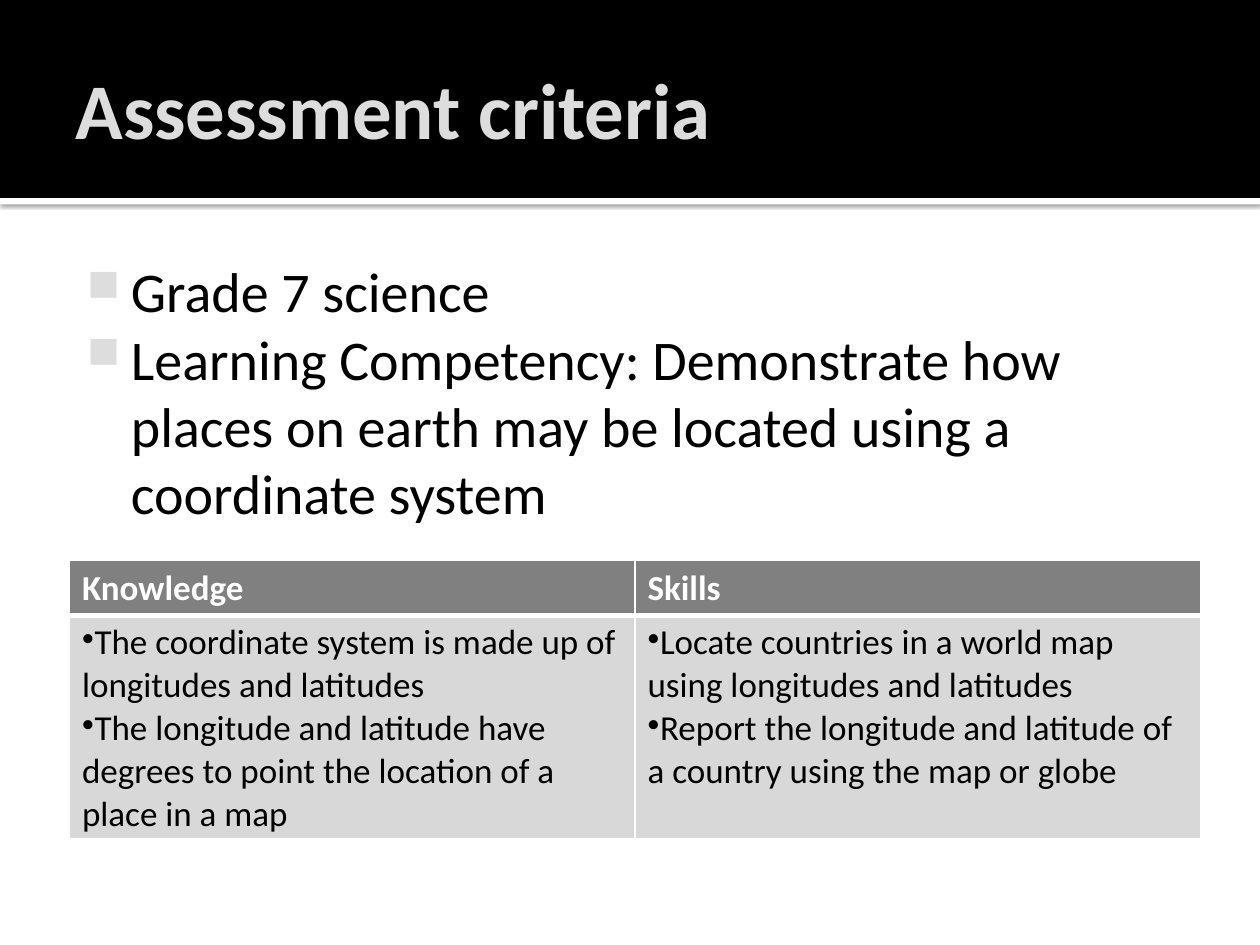
from lxml import etree
from pptx import Presentation
from pptx.dml.color import RGBColor
from pptx.enum import shapes, text
from pptx.oxml import ns
from pptx.util import Cm, Pt

HUES = {"black": "000000", "white": "FFFFFF", "pale": "DDDDDD",
        "head": "808080", "cell": "D8D8D8"}
RGB = {name: RGBColor.from_string(hue) for name, hue in HUES.items()}


def add(parent, tag, **attrs):
    """Append a DrawingML element."""
    node = etree.SubElement(parent, ns.qn(tag))
    for key, val in attrs.items():
        node.set(key, str(val))
    return node


def style(para, size, hue, bold=False):
    font = para.font
    font.name, font.size, font.bold = "Calibri", Pt(size), bold
    font.color.rgb = RGB[hue]


deck = Presentation()
deck.slide_width, deck.slide_height = Cm(25.4), Cm(19.05)
slide = deck.slides.add_slide(deck.slide_layouts[5])

# Header band above a white strip with a soft shadow, both behind the title
bands = [("black", 0, 3.99), ("white", 3.99, 0.13)]
for hue, top, high in bands:
    band = slide.shapes.add_shape(shapes.MSO_SHAPE.RECTANGLE,
                                  0, Cm(top), deck.slide_width, Cm(high))
    band.shadow.inherit = False
    band.fill.solid()
    band.fill.fore_color.rgb = RGB[hue]
    band.line.fill.background()
    slide.shapes._spTree.insert(2, band._element)
glow = band._element.spPr.find(ns.qn("a:effectLst"))
shade = add(glow, "a:outerShdw", blurRad=Pt(2.5), dist=Pt(0.8),
            dir=90 * 60000, algn="tl", rotWithShape=0)
add(add(shade, "a:srgbClr", val=HUES["black"]), "a:alpha", val=60000)

# Title
title = slide.shapes.title
title.left, title.top, title.width, title.height = (
    Cm(1.27), Cm(0.43), Cm(22.86), Cm(3.48))
frame = title.text_frame
frame.text = "Assessment criteria"
frame.vertical_anchor = text.MSO_ANCHOR.MIDDLE
frame.margin_left, frame.margin_right = Cm(0.25), Cm(0.13)
frame.paragraphs[0].alignment = text.PP_ALIGN.LEFT
style(frame.paragraphs[0], 45, "pale", True)

# Bulleted body
body = slide.shapes.add_textbox(Cm(1.27), Cm(4.93), Cm(22.86), Cm(12.85))
frame = body.text_frame
frame.word_wrap = True
frame.margin_left, frame.margin_top = Cm(0.15), Cm(0.25)
frame.text = ("Grade 7 science\n"
              "Learning Competency: Demonstrate how places on earth "
              "may be located using a coordinate system")
for para in frame.paragraphs:
    style(para, 32, "black")
    props = para._p.get_or_add_pPr()
    props.set("marL", str(Cm(1.22)))
    props.set("indent", str(Cm(-0.89)))
    props.insert(0, etree.Element(ns.qn("a:buClr")))
    add(props[0], "a:srgbClr", val=HUES["pale"])
    props.insert(1, etree.Element(ns.qn("a:buSzPct"), val="80000"))
    props.insert(2, etree.Element(ns.qn("a:buChar"), char="■"))

# Table of criteria
rows = [
    ["Knowledge", "Skills"],
    ["The coordinate system is made up of longitudes and latitudes\n"
     "The longitude and latitude have degrees to point the location "
     "of a place in a map",
     "Locate countries in a world map using longitudes and latitudes\n"
     "Report the longitude and latitude of a country using the map or globe"],
]
table = slide.shapes.add_table(2, 2, Cm(1.4), Cm(11.3),
                               Cm(22.8), Cm(5.6)).table
table.rows[0].height, table.rows[1].height = Cm(1.1), Cm(4.5)
for r, row in enumerate(rows):
    # The rule between the rows is thicker than the others
    widths = {"L": 1, "R": 1, "T": 3 if r else 1, "B": 1 if r else 3}
    for c, words in enumerate(row):
        cell = table.cell(r, c)
        cell.text = words
        props = cell._tc.get_or_add_tcPr()
        for side, width in widths.items():
            line = add(props, f"a:ln{side}", w=Pt(width))
            add(add(line, "a:solidFill"), "a:srgbClr", val=HUES["white"])
        cell.fill.solid()
        cell.fill.fore_color.rgb = RGB["cell" if r else "head"]
        for para in cell.text_frame.paragraphs:
            style(para, 20, "black" if r else "white", r == 0)
            if r:
                mark = etree.Element(ns.qn("a:buChar"), char="•")
                para._p.get_or_add_pPr().insert(0, mark)

deck.save("out.pptx")
